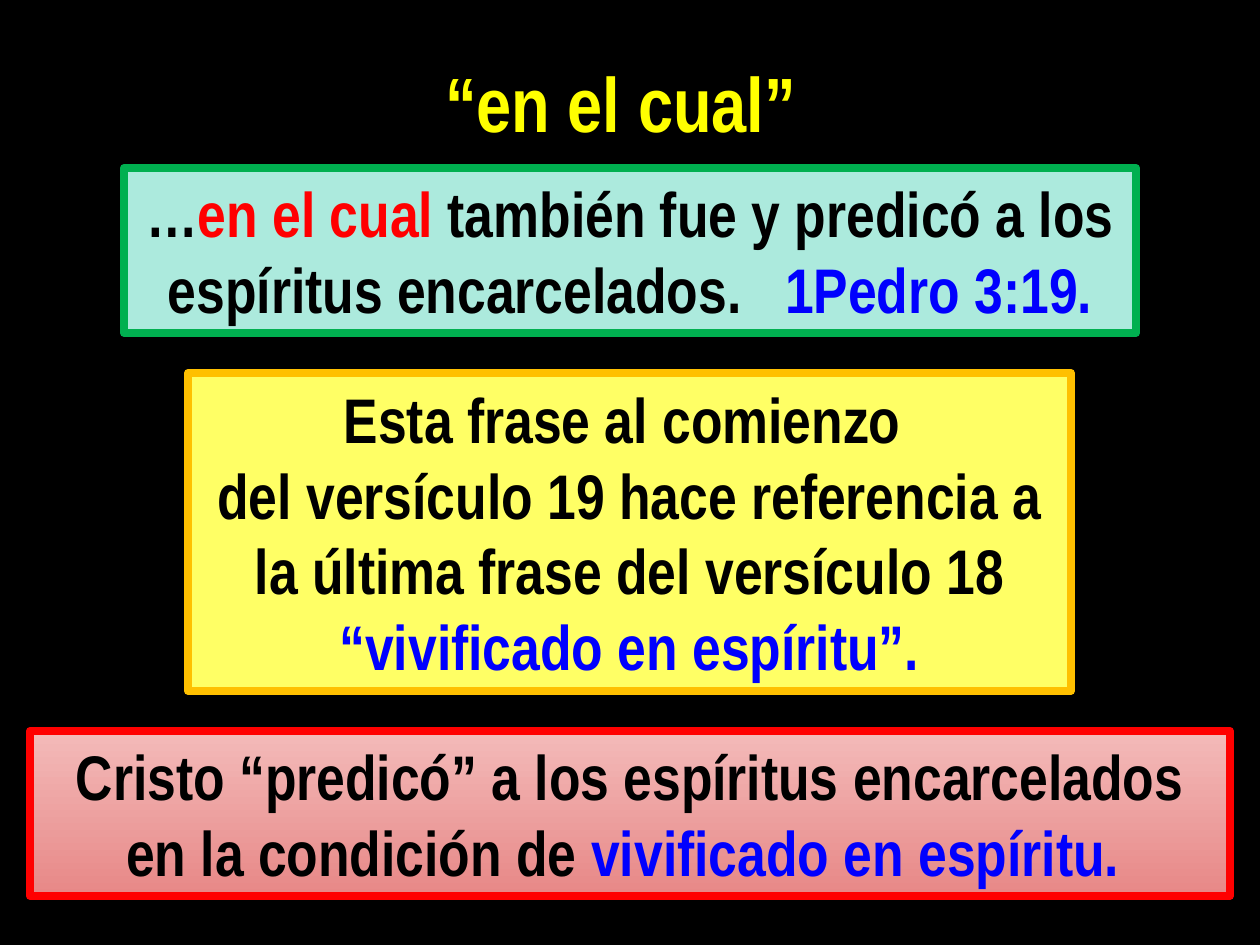
import pptx
import pptx.dml.color
import pptx.enum.shapes
import pptx.enum.text
import pptx.util

RGB = pptx.dml.color.RGBColor
BLACK = RGB(0x00, 0x00, 0x00)
RED = RGB(0xFF, 0x00, 0x00)
BLUE = RGB(0x00, 0x00, 0xFE)
YELLOW = RGB(0xFF, 0xFF, 0x00)
GREEN = RGB(0x00, 0xB0, 0x50)
GOLD = RGB(0xFF, 0xC0, 0x00)
MINT = RGB(0xAC, 0xEA, 0xDD)
LEMON = RGB(0xFF, 0xFF, 0x65)
ROSE = RGB(0xF3, 0xBA, 0xB9)
CORAL = RGB(0xE7, 0x88, 0x87)


class Board:
    """Holds the deck style and the current slide, and draws its elements."""

    FACE = "Arial Narrow"
    SCALE = 914400 / 126

    def __init__(self):
        self.deck = pptx.Presentation()
        self.deck.slide_width = self.px(1260)
        self.deck.slide_height = self.px(945)
        self.slide = self.deck.slides.add_slide(self.deck.slide_layouts[5])
        back = self.slide.background.fill
        back.solid()
        back.fore_color.rgb = BLACK

    def px(self, size):
        return pptx.util.Emu(round(size * self.SCALE))

    def label(self, shape, lines, size, wrap=True):
        frame = shape.text_frame
        frame.word_wrap = wrap
        frame.auto_size = pptx.enum.text.MSO_AUTO_SIZE.SHAPE_TO_FIT_TEXT
        frame.vertical_anchor = pptx.enum.text.MSO_ANCHOR.MIDDLE
        for i, parts in enumerate(lines):
            para = frame.add_paragraph() if i else frame.paragraphs[0]
            para.alignment = pptx.enum.text.PP_ALIGN.CENTER
            para.font.name = self.FACE
            para.font.size = pptx.util.Pt(size)
            para.font.bold = True
            for text, color in parts:
                run = para.add_run()
                run.text = text
                run.font.color.rgb = color

    def title(self, box, text, color):
        shape = self.slide.shapes.title
        shape.left, shape.top, shape.width, shape.height = map(self.px, box)
        self.label(shape, [[(text, color)]], 44, wrap=False)

    def panel(self, box, fills, edge, lines):
        kind = pptx.enum.shapes.MSO_SHAPE.RECTANGLE
        shape = self.slide.shapes.add_shape(kind, *map(self.px, box))
        shape.shadow.inherit = False
        if len(fills) == 1:
            shape.fill.solid()
            shape.fill.fore_color.rgb = fills[0]
        else:
            shape.fill.gradient()
            shape.fill.gradient_angle = 270
            for stop, color in zip(shape.fill.gradient_stops, fills):
                stop.color.rgb = color
        shape.line.color.rgb = edge
        shape.line.width = pptx.util.Pt(4.5)
        self.label(shape, lines, 36)


def main():
    board = Board()
    board.title((431, 49, 397, 106), "“en el cual” ", YELLOW)
    board.panel((124, 168, 1012, 165), [MINT], GREEN, [[
        ("…", BLACK),
        ("en el cual ", RED),
        ("también fue y predicó a los espíritus encarcelados.   ", BLACK),
        ("1Pedro 3:19.", BLUE),
    ]])
    board.panel((188, 373, 883, 318), [LEMON], GOLD, [
        [("Esta frase al comienzo ", BLACK)],
        [("del versículo 19 hace referencia a la última frase "
          "del versículo 18 ", BLACK),
         ("“vivificado en espíritu”.", BLUE)],
    ])
    board.panel((30, 731, 1200, 165), [ROSE, CORAL], RED, [[
        ("Cristo “predicó” a los espíritus encarcelados "
         "en la condición de ", BLACK),
        ("vivificado en espíritu. ", BLUE),
    ]])
    board.deck.save("out.pptx")


if __name__ == "__main__":
    main()
